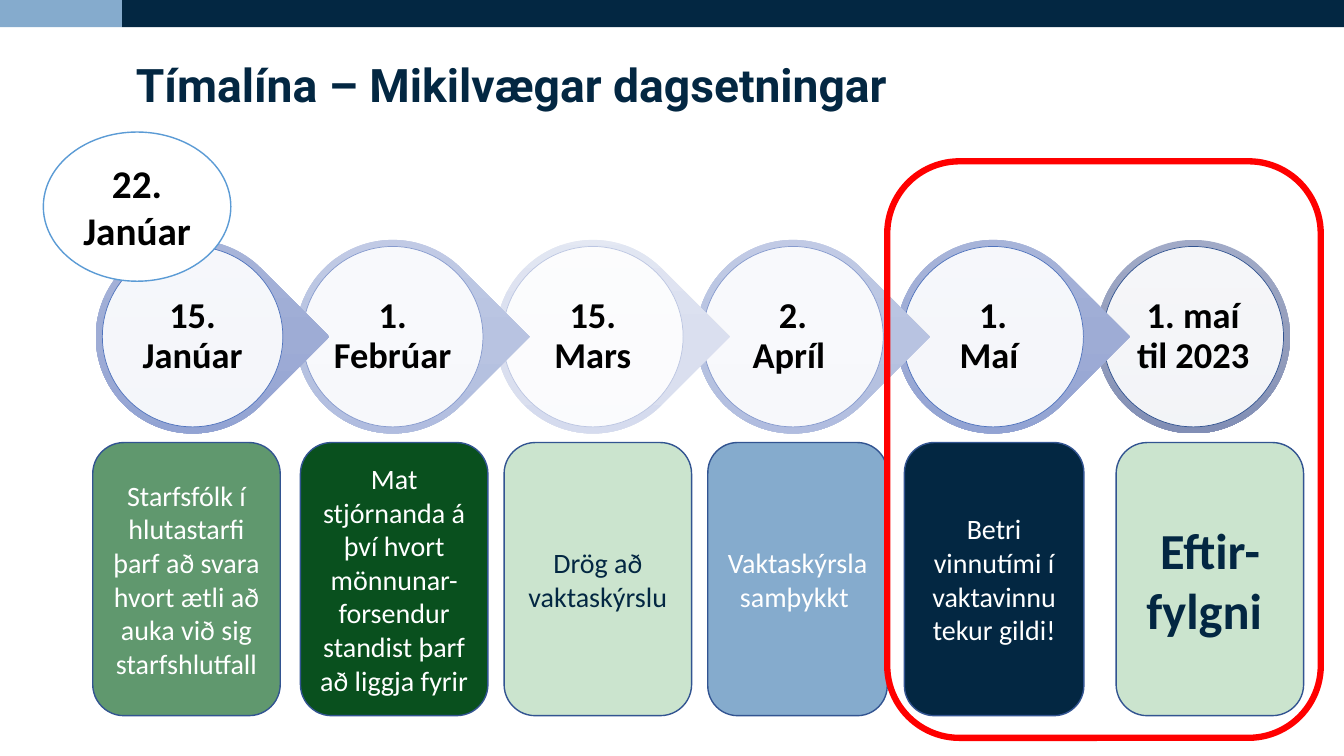
from lxml.etree import SubElement
from pptx import Presentation
from pptx.dml.color import RGBColor
from pptx.enum.shapes import MSO_SHAPE as Shape
from pptx.enum.text import MSO_ANCHOR as Anchor, PP_ALIGN as Align
from pptx.oxml.ns import qn
from pptx.util import Inches, Pt

WIDTH, HEIGHT = 13.33, 7.5
NAVY, SKY, MINT, WHITE, BLACK = "032742", "85ABCD", "CBE4CE", "FFFFFF", "000000"
EDGE = "325491"

RING_LEFT, RING_TOP, RING_STEP, RING_SIZE = 0.95, 2.38, 1.985, 1.92
DISC_SIZE, LABEL_SIZE = 1.79, 1.28
CARD_TOP, CARD_HEIGHT = 4.39, 2.71

BLUE = ("ACB8DB", "9EACD5", "8D9FD2", "4F73BD")
SOFT = ("C5CEE7", "B8C3E1", "ADBADE", "879BCE")
PALE = ("E6EAF4", "DADFEF", "D5DBEE", "BCC6E2")
STEEL = ("A1AAC7", "949EBC", "818EB5", EDGE)

DATES = [
    ("15. Janúar", BLUE),
    ("1. Febrúar ", SOFT),
    ("15. Mars", PALE),
    ("2.\vApríl ", SOFT),
    ("1.\vMaí ", BLUE),
    ("1. maí til 2023", STEEL),
]

CARDS = [
    (0.92, 1.86, "60986E", WHITE,
     "Starfsfólk í hlutastarfi þarf að svara hvort ætli að auka við sig starfshlutfall"),
    (2.98, 1.86, "09501E", WHITE,
     "Mat stjórnanda á því hvort mönnunar-forsendur standist þarf að liggja fyrir"),
    (5.0, 1.86, MINT, NAVY, "Drög að vaktaskýrslu"),
    (7.02, 1.78, SKY, WHITE, "Vaktaskýrsla samþykkt "),
    (8.97, 1.78, NAVY, WHITE, "Betri vinnutími í vaktavinnu tekur gildi!"),
]


def color(value):
    return RGBColor.from_string(value)


def write(box, text, size=20, ink=BLACK, bold=False, font="Calibri",
          align=Align.CENTER, anchor=Anchor.MIDDLE, spacing=None, inset=None):
    frame = box.text_frame
    frame.word_wrap = True
    frame.vertical_anchor = anchor
    if inset is not None:
        frame.margin_left = frame.margin_right = Inches(inset)
        frame.margin_top = frame.margin_bottom = Inches(inset)
    para = frame.paragraphs[0]
    para.text = text
    para.alignment = align
    if spacing:
        para.line_spacing = spacing
    for span in para.runs:
        span.font.size = Pt(size)
        span.font.name = font
        span.font.bold = bold
        span.font.color.rgb = color(ink)


def add_box(page, left, top, width, height):
    return page.shapes.add_textbox(*map(Inches, (left, top, width, height)))


def add_form(page, kind, left, top, width, height, fill=None, line=None, weight=1):
    form = page.shapes.add_shape(kind, *map(Inches, (left, top, width, height)))
    form.shadow.inherit = False
    if fill:
        form.fill.solid()
        form.fill.fore_color.rgb = color(fill)
    else:
        form.fill.background()
    if line:
        form.line.color.rgb = color(line)
        form.line.width = Pt(weight)
    else:
        form.line.fill.background()
    return form


def shade(form, tones):
    form.fill.gradient()
    form.fill.gradient_angle = 270
    gradient = form.fill._xPr.find(qn("a:gradFill"))
    gradient.set("rotWithShape", "0")
    stops = gradient.find(qn("a:gsLst"))
    for stop in list(stops):
        stops.remove(stop)
    for index, tone in enumerate(tones):
        stop = SubElement(stops, qn("a:gs"), pos=str(index * 50000))
        SubElement(stop, qn("a:srgbClr"), val=tone)


def set_opacity(form, percent):
    tint = form.fill._xPr.find(qn("a:solidFill"))[0]
    SubElement(tint, qn("a:alpha"), val=str(percent * 1000))


def add_date(page, column, text, palette, last):
    left = RING_LEFT + column * RING_STEP
    kind = Shape.OVAL if last else Shape.TEAR
    ring = add_form(page, kind, left, RING_TOP, RING_SIZE, RING_SIZE)
    ring.rotation = 0 if last else 45
    shade(ring, palette[:3])

    gap = (RING_SIZE - DISC_SIZE) / 2
    disc = add_form(page, Shape.OVAL, left + gap, RING_TOP + gap,
                    DISC_SIZE, DISC_SIZE, WHITE, palette[3], 0.5)
    set_opacity(disc, 90)

    gap = (RING_SIZE - LABEL_SIZE) / 2
    label = add_box(page, left + gap, RING_TOP + gap, LABEL_SIZE, LABEL_SIZE)
    write(label, text, size=26, bold=True, spacing=0.9, inset=0.04)


def add_card(page, left, width, fill, ink, text, size=20, bold=False):
    card = add_form(page, Shape.ROUNDED_RECTANGLE, left, CARD_TOP, width,
                    CARD_HEIGHT, fill, EDGE)
    write(card, text, size=size, ink=ink, bold=bold)


def add_header(page):
    split, depth = 1.21, 0.27
    add_form(page, Shape.RECTANGLE, split, 0, WIDTH - split, depth, NAVY)
    add_form(page, Shape.RECTANGLE, 0, 0, split, depth, SKY)
    title = add_box(page, 1.25, 0.57, 10.83, 0.86)
    write(title, "Tímalína – Mikilvægar dagsetningar", size=33, ink=NAVY, bold=True,
          font="Roboto", align=Align.LEFT, anchor=Anchor.TOP, spacing=0.9)


def main():
    deck = Presentation()
    deck.slide_width, deck.slide_height = Inches(WIDTH), Inches(HEIGHT)
    page = deck.slides.add_slide(deck.slide_layouts[6])

    add_header(page)
    final = len(DATES) - 1
    for column in range(final, -1, -1):
        add_date(page, column, *DATES[column], last=column == final)
    for card in CARDS:
        add_card(page, *card)

    bubble = add_form(page, Shape.OVAL, 0.43, 1.31, 1.86, 1.48, WHITE, "5B9BD5")
    write(bubble, "22. Janúar", size=28, bold=True)
    add_form(page, Shape.ROUNDED_RECTANGLE, 8.8, 1.6, 4.3, 5.72,
             line="FF0000", weight=4.5)
    add_card(page, 11.07, 1.86, MINT, NAVY, "Eftir-fylgni ", size=36, bold=True)

    deck.save("out.pptx")


if __name__ == "__main__":
    main()
